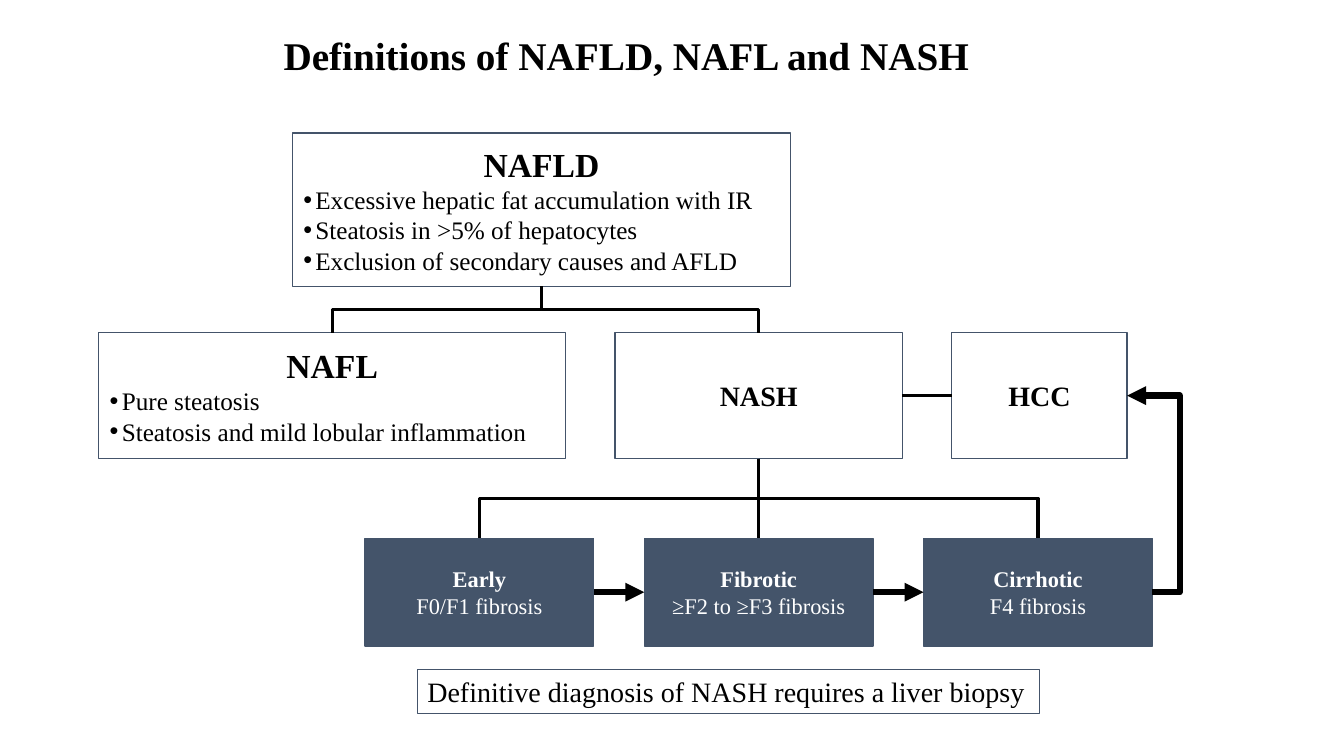
from lxml import etree
from pptx import Presentation
from pptx import util as u
from pptx.dml.color import RGBColor
from pptx.enum import shapes, text
from pptx.oxml import ns

FONT = "Times New Roman"
BLACK, WHITE, SLATE = "000000", "FFFFFF", "44546A"
TOP, LEFT, BOTTOM, RIGHT = range(4)
TITLE = "Definitions of NAFLD, NAFL and NASH"
NOTE = "Definitive diagnosis of NASH requires a liver biopsy"
CONDITIONS = [
    ("NAFLD", 24, (2.9, 1.32, 4.94, 1.52), [
        "Excessive hepatic fat accumulation with IR",
        "Steatosis in >5% of hepatocytes",
        "Exclusion of secondary causes and AFLD"]),
    ("NAFL", 24, (0.98, 3.3, 4.63, 1.25), [
        "Pure steatosis",
        "Steatosis and mild lobular inflammation"]),
    ("NASH", 20, (6.1, 3.3, 2.85, 1.25), []),
    ("HCC", 20, (9.44, 3.3, 1.74, 1.25), []),
]
STAGES = [
    ("Early", "F0/F1 fibrosis"),
    ("Fibrotic", "≥F2 to ≥F3 fibrosis"),
    ("Cirrhotic", "F4 fibrosis"),
]
STAGE_LEFT, STAGE_TOP, STAGE_W, STAGE_H, STAGE_STEP = 3.62, 5.34, 2.27, 1.07, 2.77
BRANCHES = [("NAFLD", "NAFL"), ("NAFLD", "NASH"), ("NASH", "Early"), ("NASH", "Cirrhotic")]
STRAIGHTS = [
    ("NASH", BOTTOM, "Fibrotic", TOP, False),
    ("NASH", RIGHT, "HCC", LEFT, False),
    ("Early", RIGHT, "Fibrotic", LEFT, True),
    ("Fibrotic", RIGHT, "Cirrhotic", LEFT, True),
]


def rgb(value):
    return RGBColor.from_string(value)


def add_run(p, words, size, bold=False, color=BLACK):
    r = p.add_run()
    r.text = words
    r.font.name, r.font.size, r.font.bold = FONT, u.Pt(size), bold
    r.font.color.rgb = rgb(color)


def add_bullet(p):
    p.alignment = text.PP_ALIGN.LEFT
    pPr = p._p.get_or_add_pPr()
    pPr.set("marL", str(u.Inches(0.13)))
    pPr.set("indent", str(u.Inches(-0.12)))
    etree.SubElement(pPr, ns.qn("a:buFont"), typeface="Arial")
    etree.SubElement(pPr, ns.qn("a:buChar"), char="•")


def add_box(place, fill, heading, size, color):
    sp = s.shapes.add_shape(shapes.MSO_SHAPE.RECTANGLE, *map(u.Inches, place))
    sp.shadow.inherit = False
    sp.fill.solid()
    sp.fill.fore_color.rgb = rgb(fill)
    sp.line.color.rgb = rgb(SLATE)
    sp.line.width = u.Pt(1)
    tf = sp.text_frame
    tf.word_wrap = True
    tf.vertical_anchor = text.MSO_ANCHOR.MIDDLE
    p = tf.paragraphs[0]
    p.alignment = text.PP_ALIGN.CENTER
    add_run(p, heading, size, True, color)
    return sp


def connect(kind, start, start_site, end, end_site, arrow=False):
    c = s.shapes.add_connector(kind, 0, 0, 0, 0)
    c.begin_connect(boxes[start], start_site)
    c.end_connect(boxes[end], end_site)
    c.line.color.rgb = rgb(BLACK)
    c.line.width = u.Pt(4.5 if arrow else 2.25)
    if arrow:
        etree.SubElement(c.line._get_or_add_ln(), ns.qn("a:tailEnd"), type="triangle")
    etree.SubElement(c._element.spPr, ns.qn("a:effectLst"))
    return c


def branch(parent, child):
    c = connect(shapes.MSO_CONNECTOR.ELBOW, parent, BOTTOM, child, TOP)
    across, down = c.width, c.height
    mid_x, mid_y = c.left + across // 2, c.top + down // 2
    goes_right = c.end_x > c.begin_x
    c.left, c.top = mid_x - down // 2, mid_y - across // 2
    c.width, c.height = down, across
    xfrm = c._element.spPr.get_or_add_xfrm()
    xfrm.flipH = goes_right
    xfrm.rot = 270 if goes_right else 90


prs = Presentation()
prs.slide_width, prs.slide_height = u.Inches(13.33), u.Inches(7.5)
s = prs.slides.add_slide(prs.slide_layouts[5])

title = s.shapes.title
title.left, title.top, title.width, title.height = map(u.Inches, (0.47, 0.15, 11.48, 0.84))
title.text_frame.vertical_anchor = text.MSO_ANCHOR.MIDDLE
p = title.text_frame.paragraphs[0]
p.alignment = text.PP_ALIGN.CENTER
p.line_spacing = 0.9
add_run(p, TITLE, 28, True)

boxes = {}
for name, size, place, points in CONDITIONS:
    boxes[name] = add_box(place, WHITE, name, size, BLACK)
    for point in points:
        p = boxes[name].text_frame.add_paragraph()
        add_bullet(p)
        add_run(p, point, 18)

for i, (name, fibrosis) in enumerate(STAGES):
    place = (STAGE_LEFT + i * STAGE_STEP, STAGE_TOP, STAGE_W, STAGE_H)
    boxes[name] = add_box(place, SLATE, name, 16, WHITE)
    p = boxes[name].text_frame.add_paragraph()
    p.alignment = text.PP_ALIGN.CENTER
    add_run(p, fibrosis, 16, color=WHITE)

for parent, child in BRANCHES:
    branch(parent, child)
for start, start_site, end, end_site, arrow in STRAIGHTS:
    connect(shapes.MSO_CONNECTOR.STRAIGHT, start, start_site, end, end_site, arrow)

progression = connect(shapes.MSO_CONNECTOR.ELBOW, "Cirrhotic", RIGHT, "HCC", RIGHT, True)
guides = progression._element.spPr.find(ns.qn("a:prstGeom")).get_or_add_avLst()
etree.SubElement(guides, ns.qn("a:gd"), name="adj1", fmla="val -108600")

note = s.shapes.add_textbox(*map(u.Inches, (4.14, 6.64, 6.17, 0.44)))
note.line.color.rgb = rgb(SLATE)
note.line.width = u.Pt(0.75)
tf = note.text_frame
tf.word_wrap = False
tf.auto_size = text.MSO_AUTO_SIZE.SHAPE_TO_FIT_TEXT
add_run(tf.paragraphs[0], NOTE, 20)

prs.save("out.pptx")
